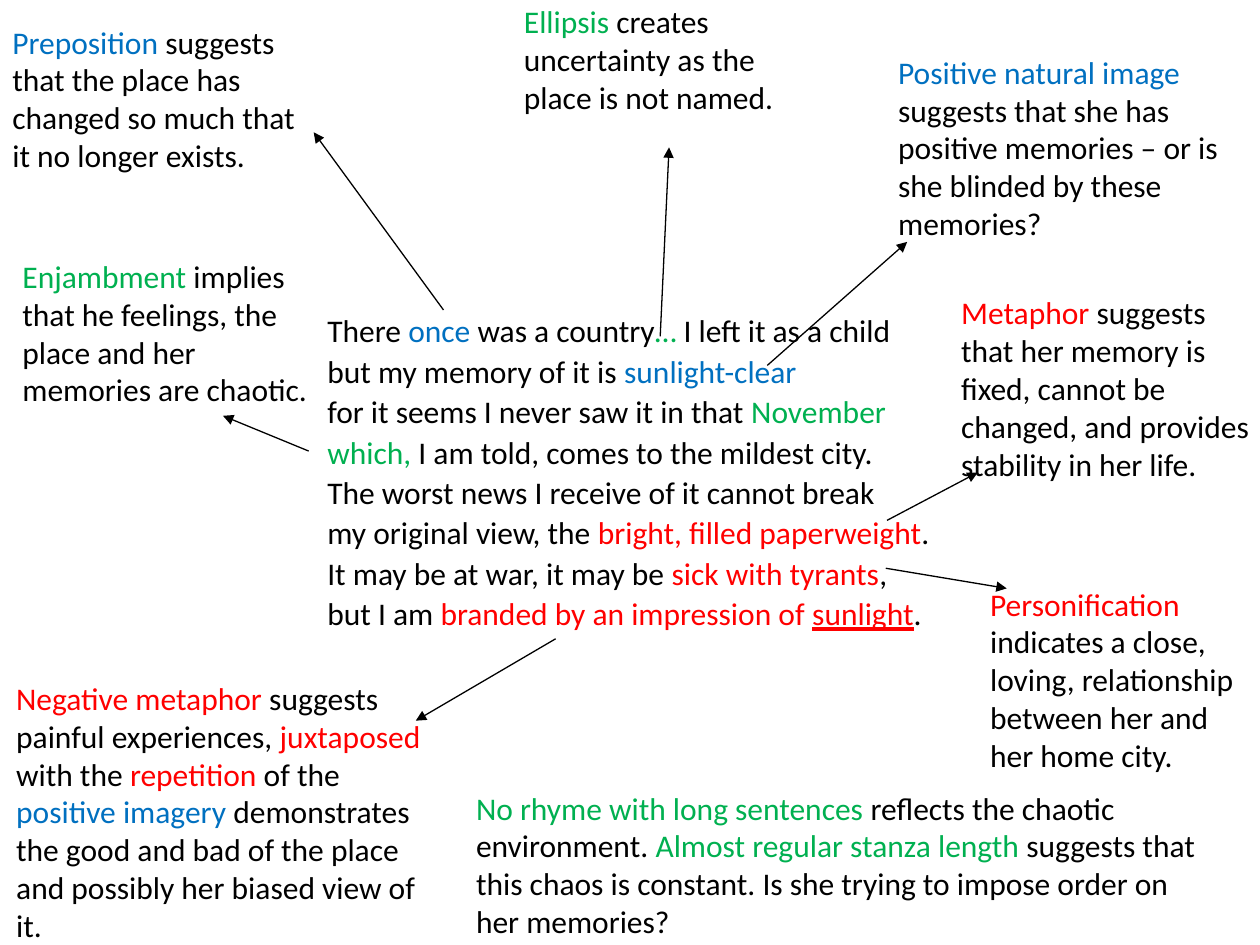
"""Build an annotated poem slide: a stanza ringed by colour-coded comments."""
from pptx import Presentation
from pptx.dml.color import RGBColor
from pptx.enum.shapes import MSO_CONNECTOR
from pptx.enum.text import MSO_AUTO_SIZE
from pptx.oxml.ns import qn
from pptx.util import Inches, Pt
from lxml.etree import SubElement

COLORS = {"black": "000000", "blue": "0070C0", "green": "00B050", "red": "FF0000"}
WIDTH, HEIGHT = Inches(10), Inches(7.5)
COL, ROW = WIDTH / 100, HEIGHT / 75

STANZA = [
    "There", (" once ", "blue"), "was a country", ("…", "green"),
    " I left it as a child\nbut my memory of it is ", ("sunlight-clear\n", "blue"),
    "for it seems I never saw it in that ", ("November\nwhich,", "green"),
    " I am told, comes to the mildest city.\n"
    "The worst news I receive of it cannot break\nmy original view, the ",
    ("bright, filled paperweight", "red"), ".\nIt may be at war, it may be ",
    ("sick with tyrants", "red"), ",\nbut I am ",
    ("branded by an impression of ", "red"), ("sunlight", "red", True), ".",
]

COMMENTS = [
    ((0, 1.3, 25, 13.1), [
        ("Preposition ", "blue"),
        "suggests that the place has changed so much that it no longer exists."]),
    ((40.6, -0.3, 25, 10.1), [
        ("Ellipsis ", "green"), "creates uncertainty as the place is not named."]),
    ((70.3, 3.7, 29.7, 16.2), [
        ("Positive natural image ", "blue"),
        "suggests that she has positive memories – or is she blinded by these memories?"]),
    ((0.8, 19.9, 25, 13.1), [
        ("Enjambment ", "green"),
        "implies that he feelings, the place and her memories are chaotic."]),
    ((75.3, 22.8, 25.4, 16.2), [
        ("Metaphor ", "red"),
        "suggests that her memory is fixed, cannot be changed, "
        "and provides stability in her life."]),
    ((77.6, 45.9, 22.6, 16.2), [
        ("Personification ", "red"),
        "indicates a close, loving, relationship between her and her home city."]),
    ((0.3, 53.4, 34.8, 22.2), [
        ("Negative metaphor ", "red"), "suggests painful experiences, ",
        ("juxtaposed ", "red"), "with the ", ("repetition ", "red"), "of the ",
        ("positive imagery ", "blue"),
        "demonstrates the good and bad of the place and possibly her biased view of it."]),
    ((36.8, 62.1, 59.4, 13.1), [
        ("No rhyme with long sentences ", "green"), "reflects the chaotic environment. ",
        ("Almost regular stanza length ", "green"),
        "suggests that this chaos is constant. "
        "Is she trying to impose order on her memories?"]),
]

ARROWS = [
    (35.2, 24.6, 24.9, 10.5),
    (24.5, 35.8, 17.7, 33),
    (52.4, 26.7, 53.1, 11.7),
    (60.9, 29, 72, 19.2),
    (70.4, 41.3, 77.6, 37.5),
    (70.3, 45.1, 79.9, 46.7),
    (44.1, 50.7, 33, 57.2),
]


def place(x, y):
    """Turn grid columns and rows into slide lengths."""
    return round(x * COL), round(y * ROW)


def add_run(p, text, color="black", underline=None):
    """Add formatted text to a paragraph, with line breaks at newlines."""
    for i, line in enumerate(text.split("\n")):
        if i:
            p.add_line_break()
        if line:
            r = p.add_run()
            r.text = line
            r.font.name, r.font.size = "Calibri", Pt(18)
            r.font.underline = underline
            r.font.color.rgb = RGBColor.from_string(COLORS[color])


def add_text(slide, box, runs, line_spacing=None, space_after=None):
    """Add a wrapping text box of plain strings and coloured runs."""
    x, y, w, h = box
    tf = slide.shapes.add_textbox(*place(x, y), *place(w, h)).text_frame
    tf.word_wrap = True
    tf.auto_size = MSO_AUTO_SIZE.SHAPE_TO_FIT_TEXT
    p = tf.paragraphs[0]
    p.line_spacing, p.space_after = line_spacing, space_after
    for run in runs:
        add_run(p, *([run] if isinstance(run, str) else run))


def add_arrow(slide, x1, y1, x2, y2):
    """Draw a thin black arrow from a phrase to its comment."""
    sp = slide.shapes.add_connector(
        MSO_CONNECTOR.STRAIGHT, *place(x1, y1), *place(x2, y2))
    sp.line.color.rgb = RGBColor.from_string(COLORS["black"])
    sp.line.width = Pt(0.75)
    SubElement(sp.line._get_or_add_ln(), qn("a:tailEnd"), type="triangle")
    SubElement(sp._element.spPr, qn("a:effectLst"))


def main():
    """Assemble and save the slide."""
    prs = Presentation()
    prs.slide_width, prs.slide_height = WIDTH, HEIGHT
    slide = prs.slides.add_slide(prs.slide_layouts[6])
    add_text(slide, (25, 24, 50, 26.9), STANZA, line_spacing=1.07, space_after=Pt(8))
    for arrow in ARROWS:
        add_arrow(slide, *arrow)
    for box, runs in COMMENTS:
        add_text(slide, box, runs)
    prs.save("out.pptx")


if __name__ == "__main__":
    main()
